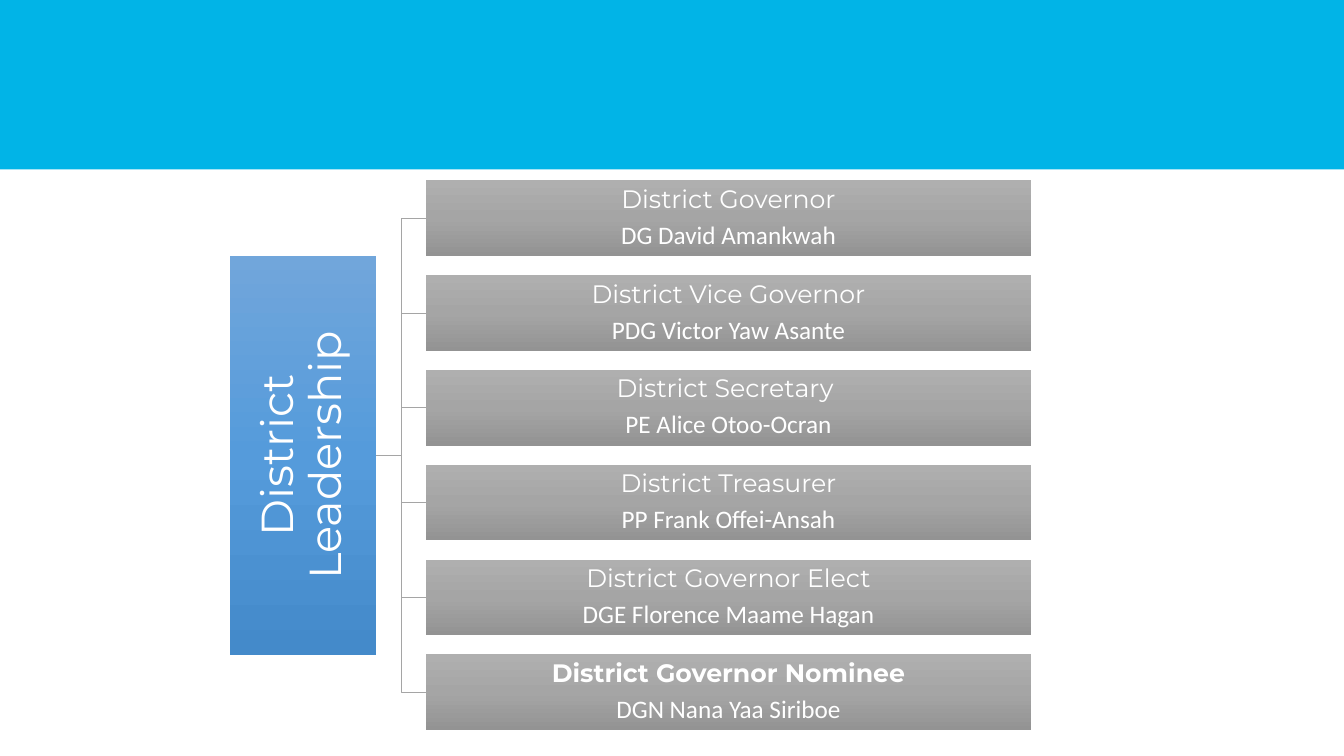
from copy import deepcopy
from pptx import Presentation, util as u
from pptx.dml.color import RGBColor
from pptx.enum import shapes, text
from pptx.oxml import ns, xmlchemy

TEAM = "District Leadership"
OFFICERS = [
    ("District Governor", "DG David Amankwah", False),
    ("District Vice Governor", "PDG Victor Yaw Asante", False),
    ("District Secretary ", "PE Alice Otoo-Ocran", False),
    ("District Treasurer", "PP Frank Offei-Ansah", False),
    ("District Governor Elect", "DGE Florence Maame Hagan", False),
    ("District Governor Nominee", "DGN Nana Yaa Siriboe", True),
]
THEME = {
    "band": "01B4E7", "line": "A5A5A5", "text": "FFFFFF",
    "team": ["71A6DB", "559BDB", "448ACA"],
    "officer": ["AFAFAF", "A5A5A5", "939393"],
    "title_font": "Montserrat", "name_font": "Calibri",
    "team_size": 32, "officer_size": 18,
}
SLIDE_W, SLIDE_H, BAND_H = 33.87, 19.05, 4.27
TEAM_LEFT, TEAM_W, TEAM_H = 5.8, 3.68, 10.06
ROW_LEFT, ROW_TOP, ROW_W, ROW_H, ROW_STEP = 10.74, 4.54, 15.24, 1.91, 2.39


def add_box(page, left, top, width, height):
    box = page.shapes.add_shape(
        shapes.MSO_SHAPE.RECTANGLE, u.Cm(left), u.Cm(top), u.Cm(width), u.Cm(height))
    box.shadow.inherit = False
    box.line.fill.background()
    return box


def shade(box, colours):
    fill = box.fill
    fill.gradient()
    fill.gradient_angle = 270
    stops = box._element.spPr.find(".//" + ns.qn("a:gsLst"))
    stops.insert(1, deepcopy(stops[0]))
    for stop, colour, position in zip(fill.gradient_stops, colours, (0, 0.5, 1)):
        stop.color.rgb = RGBColor.from_string(colour)
        stop.position = position


def write(box, content, font, size, bold=False, inset=0.03, first=True):
    frame = box.text_frame
    frame.word_wrap = True
    frame.vertical_anchor = text.MSO_ANCHOR.MIDDLE
    frame.margin_left = frame.margin_right = u.Cm(inset)
    frame.margin_top = frame.margin_bottom = u.Cm(inset)
    para = frame.paragraphs[0] if first else frame.add_paragraph()
    para.alignment = text.PP_ALIGN.CENTER
    para.line_spacing = 0.9
    para.space_after = u.Pt(size * 0.35)
    span = para.add_run()
    span.text = content
    span.font.name, span.font.size, span.font.bold = font, u.Pt(size), bold
    span.font.color.rgb = RGBColor.from_string(THEME["text"])


def join(page, team, officer):
    link = page.shapes.add_connector(shapes.MSO_CONNECTOR.ELBOW, 0, 0, 0, 0)
    link.begin_connect(team, 3)
    link.end_connect(officer, 1)
    link.line.width = u.Pt(0.5)
    link.line.color.rgb = RGBColor.from_string(THEME["line"])
    link._element.spPr.append(xmlchemy.OxmlElement("a:effectLst"))


def main():
    deck = Presentation()
    deck.slide_width, deck.slide_height = u.Cm(SLIDE_W), u.Cm(SLIDE_H)
    page = deck.slides.add_slide(deck.slide_layouts[6])

    band = add_box(page, 0, 0, SLIDE_W, BAND_H)
    band.fill.solid()
    band.fill.fore_color.rgb = RGBColor.from_string(THEME["band"])

    rows_h = ROW_STEP * (len(OFFICERS) - 1) + ROW_H
    team = add_box(page, TEAM_LEFT, ROW_TOP + (rows_h - TEAM_H) / 2, TEAM_W, TEAM_H)
    shade(team, THEME["team"])
    write(team, TEAM, THEME["title_font"], THEME["team_size"], inset=0.05)
    team.text_frame._txBody.bodyPr.set("vert", "vert270")

    for row, (title, name, bold) in enumerate(OFFICERS):
        officer = add_box(page, ROW_LEFT, ROW_TOP + row * ROW_STEP, ROW_W, ROW_H)
        shade(officer, THEME["officer"])
        write(officer, title, THEME["title_font"], THEME["officer_size"], bold=bold)
        write(officer, name, THEME["name_font"], THEME["officer_size"], first=False)
        join(page, team, officer)

    deck.save("out.pptx")


if __name__ == "__main__":
    main()
